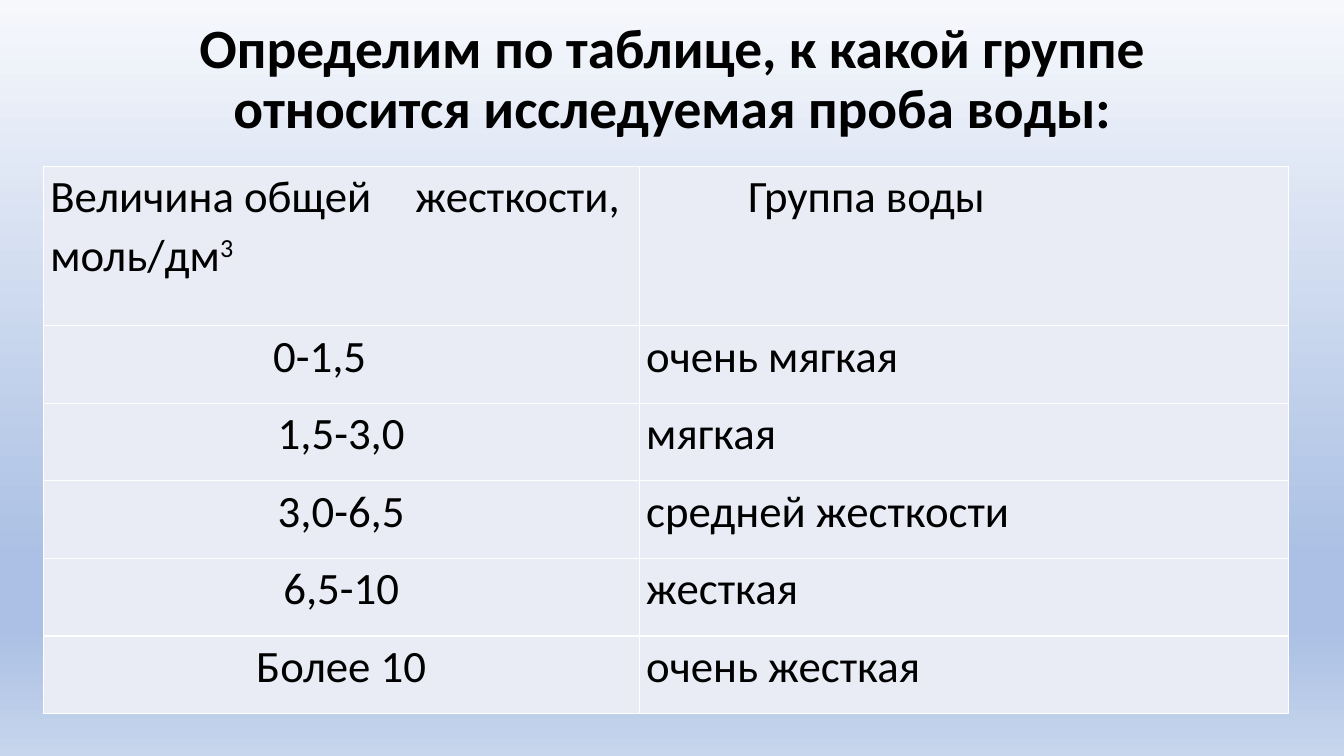
from lxml.etree import SubElement
from pptx import Presentation
from pptx.dml.color import RGBColor
from pptx.enum.text import MSO_ANCHOR, PP_ALIGN
from pptx.oxml.ns import qn
from pptx.util import Emu, Inches, Pt

COLOURS = {
    "text": "000000",
    "cell": "E9EBF5",
    "border": "FFFFFF",
    "sky_top": "F6F8FC",
    "sky_deep": "ABC0E4",
    "sky_bottom": "C7D5ED",
}
LEFT, CENTRE, JUSTIFY = PP_ALIGN.LEFT, PP_ALIGN.CENTER, PP_ALIGN.JUSTIFY


class SlideBuilder:
    """Holds the slide and its style; places are shares of the slide's size."""

    font = "Calibri"

    def __init__(self, deck):
        self.width, self.height = deck.slide_width, deck.slide_height
        self.slide = deck.slides.add_slide(deck.slide_layouts[6])

    def place(self, left, top, width, height):
        return (Emu(int(left * self.width)), Emu(int(top * self.height)),
                Emu(int(width * self.width)), Emu(int(height * self.height)))

    def background(self, stops):
        backdrop = self.slide.background
        backdrop.fill.gradient()
        gradient = self.slide.element.find(".//" + qn("a:gradFill"))
        for child in list(gradient):
            gradient.remove(child)
        stop_list = SubElement(gradient, qn("a:gsLst"))
        for percent, colour in stops:
            stop = SubElement(stop_list, qn("a:gs"), pos=str(percent * 1000))
            SubElement(stop, qn("a:srgbClr"), val=COLOURS[colour])
        SubElement(gradient, qn("a:lin"), ang=str(90 * 60000), scaled="0")

    def add_text(self, paragraph, text, size, bold=False, raised=False):
        run = paragraph.add_run()
        run.text = text
        run.font.name = self.font
        run.font.size = Pt(size)
        run.font.bold = bold
        run.font.color.rgb = RGBColor.from_string(COLOURS["text"])
        if raised:
            run._r.get_or_add_rPr().set("baseline", "30000")

    def title(self, text, place, size, bottom_inset):
        frame = self.slide.shapes.add_textbox(*self.place(*place)).text_frame
        frame.word_wrap = True
        frame.vertical_anchor = MSO_ANCHOR.MIDDLE
        frame.margin_bottom = Inches(bottom_inset)
        heading = frame.paragraphs[0]
        heading.alignment = CENTRE
        heading.line_spacing = 0.9
        self.add_text(heading, text, size, bold=True)

    def cell(self, cell, runs, align, indent=0, tab=None, size=32):
        cell.margin_left = cell.margin_right = Inches(0.07)
        cell.margin_top = cell.margin_bottom = 0
        properties = cell._tc.get_or_add_tcPr()
        for side in ("lnL", "lnR", "lnT", "lnB"):
            line = SubElement(properties, qn("a:" + side), w=str(Pt(1)))
            paint = SubElement(line, qn("a:solidFill"))
            SubElement(paint, qn("a:srgbClr"), val=COLOURS["border"])
        cell.fill.solid()
        cell.fill.fore_color.rgb = RGBColor.from_string(COLOURS["cell"])

        paragraph = cell.text_frame.paragraphs[0]
        paragraph.alignment = align
        paragraph.line_spacing = 1.07
        layout = paragraph._p.get_or_add_pPr()
        if indent:
            layout.set("marL", str(Inches(indent)))
            layout.set("indent", "0")
        if tab:
            tabs = SubElement(layout, qn("a:tabLst"))
            SubElement(tabs, qn("a:tab"), pos=str(Inches(tab)), algn="l")
        for text, raised in runs:
            self.add_text(paragraph, text, size, raised=raised)

    def table(self, rows, place, columns, heights):
        table = self.slide.shapes.add_table(
            len(rows), len(columns), *self.place(*place)).table
        table.first_row = table.horz_banding = False
        for column, width in zip(table.columns, columns):
            column.width = Inches(width)
        for row, height in zip(table.rows, heights):
            row.height = Inches(height)
        for r, row in enumerate(rows):
            for c, content in enumerate(row):
                self.cell(table.cell(r, c), **content)


def entry(text, align=JUSTIFY, indent=0):
    return {"runs": [(text, False)], "align": align, "indent": indent}


def main():
    deck = Presentation()
    deck.slide_width, deck.slide_height = Inches(13.33), Inches(7.5)
    page = SlideBuilder(deck)

    # Background
    page.background([(0, "sky_top"), (74, "sky_deep"),
                     (83, "sky_deep"), (100, "sky_bottom")])

    # Title
    page.title("Определим по таблице, к какой группе относится исследуемая проба воды:",
               (0.92 / 13.33, 0.4 / 7.5, 11.5 / 13.33, 1.45 / 7.5),
               size=39.6, bottom_inset=0.7)

    # Table of water hardness
    hardness_header = {
        "runs": [("Величина общей\tжесткости, моль/дм", False), ("3", True)],
        "align": LEFT, "tab": 3.62}
    groups = [
        (entry("0-1,5", indent=2.21), "очень мягкая"),
        (entry("1,5-3,0", CENTRE), "мягкая"),
        (entry("3,0-6,5", CENTRE), "средней жесткости"),
        (entry("6,5-10", CENTRE), "жесткая"),
        (entry("Более 10", CENTRE), "очень жесткая"),
    ]
    rows = [(hardness_header, entry("Группа воды", indent=1.01))]
    rows += [(hardness, entry(group)) for hardness, group in groups]
    page.table(rows, (0.43 / 13.33, 1.65 / 7.5, 12.35 / 13.33, 5.45 / 7.5),
               columns=(5.91, 6.44), heights=[1.58] + [0.77] * len(groups))

    deck.save("out.pptx")


if __name__ == "__main__":
    main()
